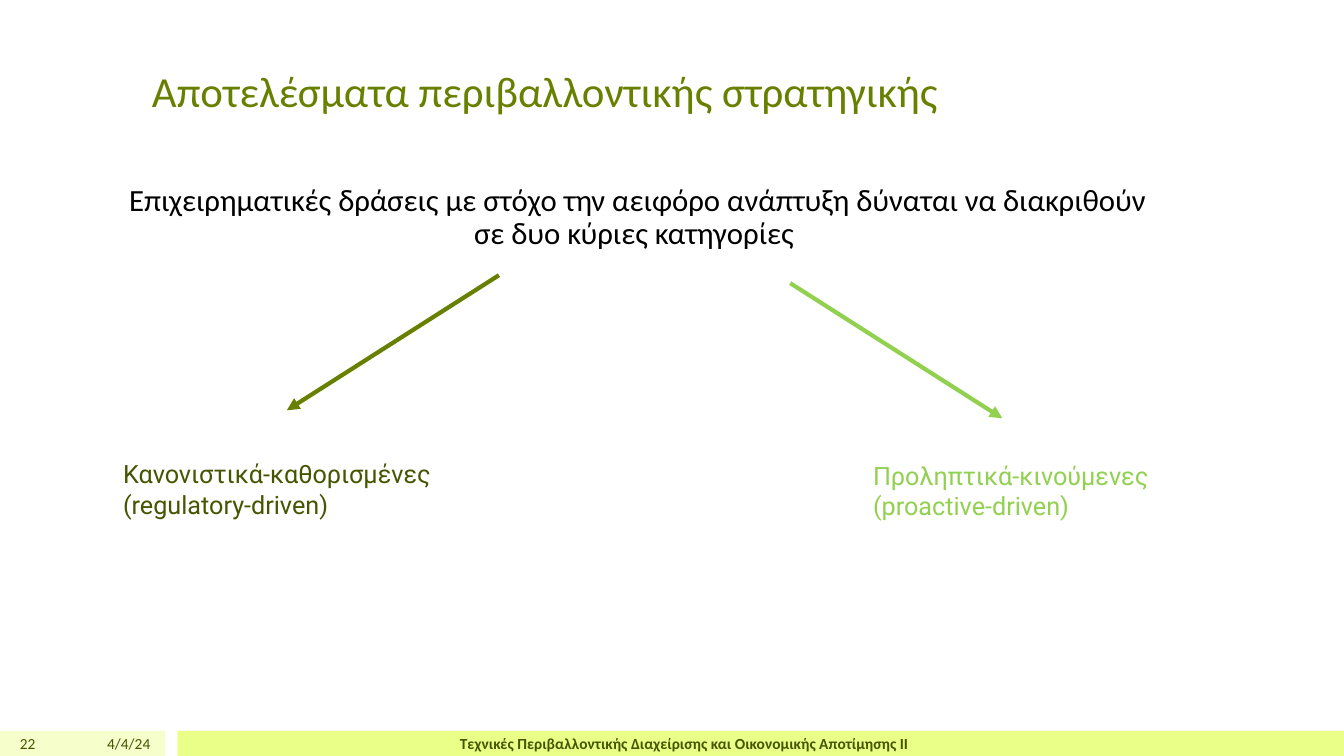
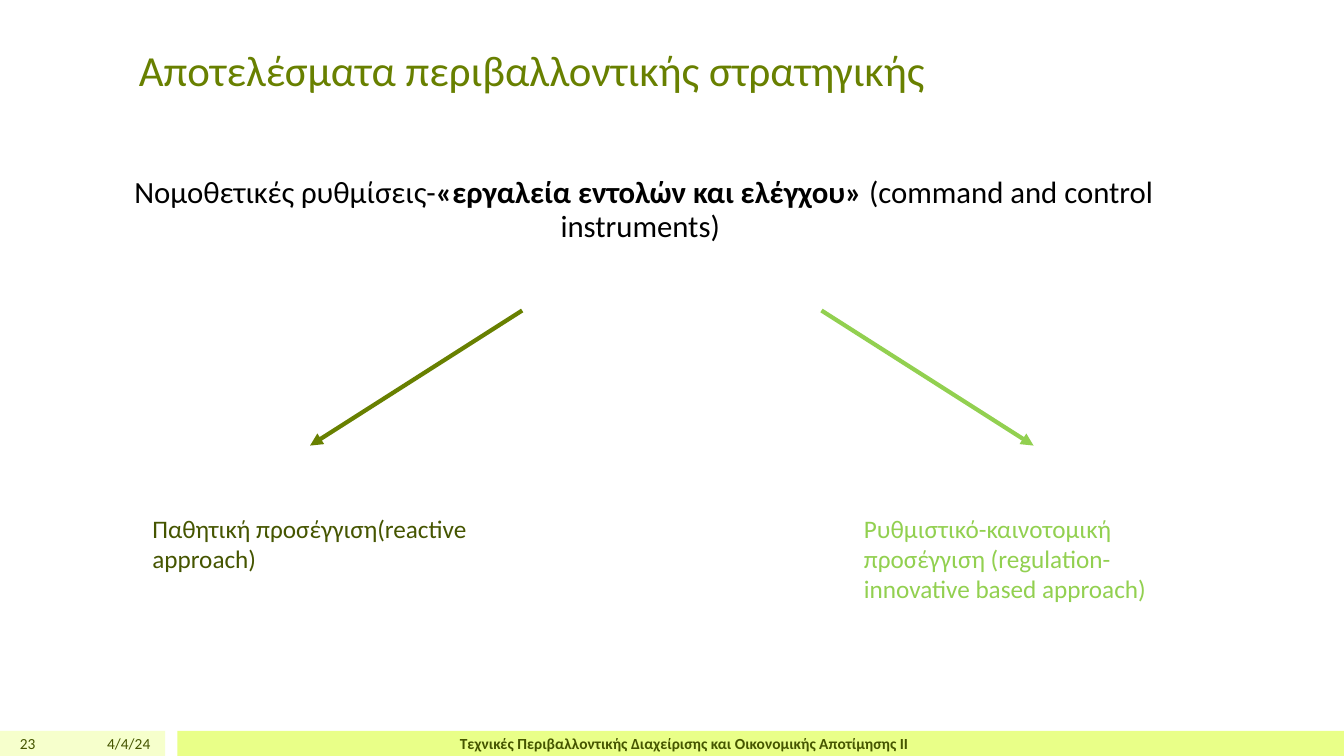
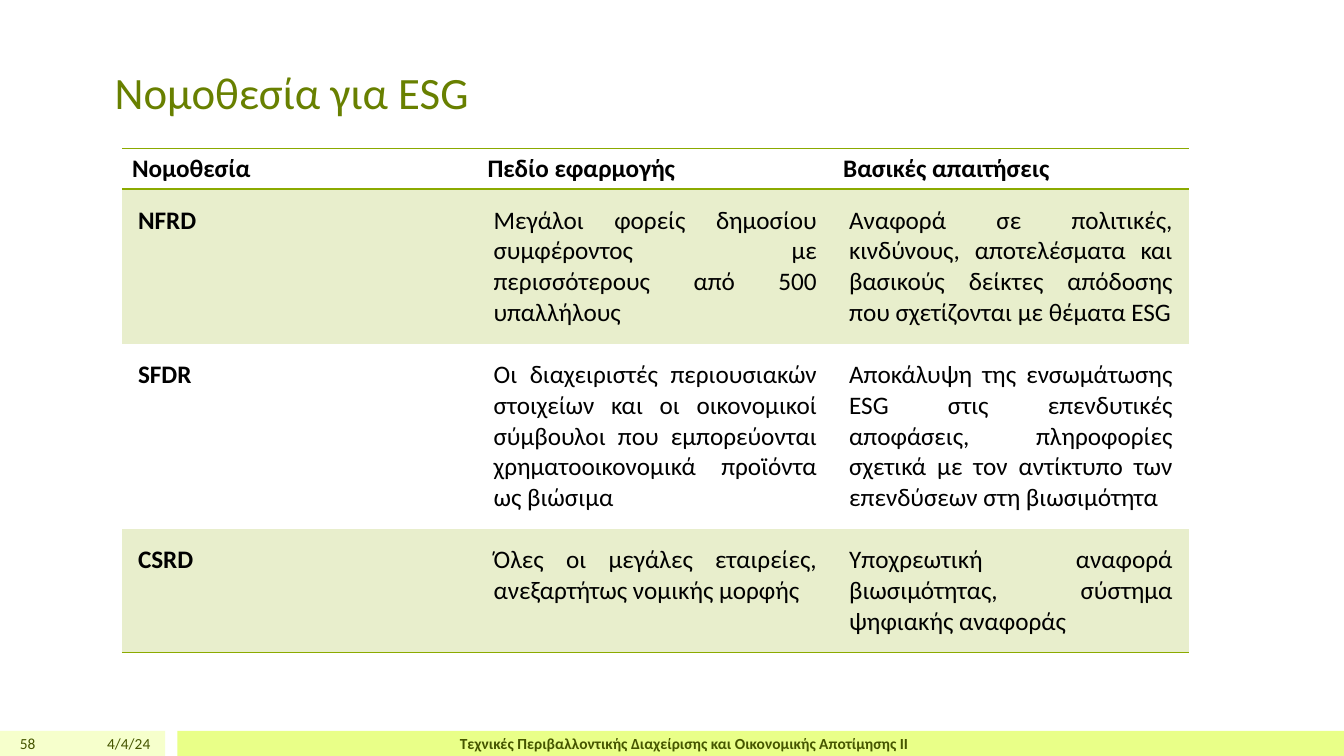
from dataclasses import dataclass

from lxml.etree import SubElement
from pptx import Presentation
from pptx.dml.color import RGBColor
from pptx.enum.shapes import MSO_CONNECTOR as Connector, MSO_SHAPE as Preset
from pptx.enum.text import MSO_ANCHOR as Anchor, PP_ALIGN as Align
from pptx.oxml.ns import qn
from pptx.util import Pt


@dataclass(frozen=True)
class Theme:
    """Colours, fonts and type sizes of the presentation."""

    olive: str = "688000"
    dark_olive: str = "455500"
    green: str = "92D050"
    rule: str = "8BAA00"
    row_tint: str = "E8EECC"
    band_pale: str = "F6FFCC"
    band_bright: str = "E9FF88"
    black: str = "000000"
    font: str = "Calibri"
    label_font: str = "Roboto"
    title_size: float = 30.6
    large_title_size: float = 32
    statement_size: float = 22
    text_size: float = 18
    footer_size: float = 11
    arrow_width: float = 3
    rule_width: float = 1


THEME = Theme()
COURSE = "Τεχνικές Περιβαλλοντικής Διαχείρισης και Οικονομικής Αποτίμησης ΙΙ"
DATE = "4/4/24"
STRATEGY_TITLE = "Αποτελέσματα περιβαλλοντικής στρατηγικής"
FOOTER_TOP, FOOTER_HEIGHT = 522, 18
ARROW_REACH, ARROW_DROP = 151.5, 96.5
NO_TABLE_STYLE = "{2D5ABB26-0587-4C30-8999-92F81FD0307C}"
LEGISLATION = [
    ("Νομοθεσία", "Πεδίο εφαρμογής", "Βασικές απαιτήσεις"),
    (
        "NFRD",
        "Μεγάλοι φορείς δημοσίου συμφέροντος με περισσότερους από 500 υπαλλήλους",
        "Αναφορά σε πολιτικές, κινδύνους, αποτελέσματα και βασικούς δείκτες "
        "απόδοσης που σχετίζονται με θέματα ESG",
    ),
    (
        "SFDR",
        "Οι διαχειριστές περιουσιακών στοιχείων και οι οικονομικοί σύμβουλοι "
        "που εμπορεύονται χρηματοοικονομικά προϊόντα ως βιώσιμα",
        "Αποκάλυψη της ενσωμάτωσης ESG στις επενδυτικές αποφάσεις, πληροφορίες "
        "σχετικά με τον αντίκτυπο των επενδύσεων στη βιωσιμότητα",
    ),
    (
        "CSRD",
        "Όλες οι μεγάλες εταιρείες, ανεξαρτήτως νομικής μορφής",
        "Υποχρεωτική αναφορά βιωσιμότητας, σύστημα ψηφιακής αναφοράς",
    ),
]


def points(*lengths):
    """Convert numbers to lengths in points."""
    return [Pt(length) for length in lengths]


def add_run(paragraph, text, size, color, bold=False, font=THEME.font):
    """Append one formatted run to a paragraph."""
    run = paragraph.add_run()
    run.text = text
    run.font.name = font
    run.font.size = Pt(size)
    run.font.bold = bold
    run.font.color.rgb = RGBColor.from_string(color)


def add_text_frame(slide, box, align=Align.LEFT, anchor=Anchor.TOP):
    """Add a wrapping text box and return its frame."""
    frame = slide.shapes.add_textbox(*points(*box)).text_frame
    frame.word_wrap = True
    frame.vertical_anchor = anchor
    frame.paragraphs[0].alignment = align
    return frame


def add_title(slide, text, box, size=THEME.title_size):
    """Add the slide title, resting on the bottom of its box."""
    frame = add_text_frame(slide, box, anchor=Anchor.BOTTOM)
    add_run(frame.paragraphs[0], text, size, THEME.olive)


def add_statement(slide, box, parts):
    """Add the centred statement from pairs of text and boldness."""
    paragraph = add_text_frame(slide, box, Align.CENTER).paragraphs[0]
    paragraph.line_spacing = 0.9
    for text, bold in parts:
        add_run(paragraph, text, THEME.statement_size, THEME.black, bold)


def add_label(slide, text, box, color, font=THEME.font):
    """Add the name of one branch."""
    frame = add_text_frame(slide, box)
    frame.margin_left = Pt(13)
    add_run(frame.paragraphs[0], text, THEME.text_size, color, font=font)


def add_arrow(slide, start, direction, color):
    """Add an arrow falling to the left (-1) or to the right (1)."""
    left, top = start
    end = left + direction * ARROW_REACH, top + ARROW_DROP
    arrow = slide.shapes.add_connector(Connector.STRAIGHT, *points(*start, *end))
    arrow.line.width = Pt(THEME.arrow_width)
    arrow.line.color.rgb = RGBColor.from_string(color)
    SubElement(arrow.line._get_or_add_ln(), qn("a:tailEnd"), type="triangle")
    SubElement(arrow._element.spPr, qn("a:effectLst"))


def add_band(slide, left, width, color):
    """Add one colour band at the foot of the slide."""
    box = points(left, FOOTER_TOP, width, FOOTER_HEIGHT)
    band = slide.shapes.add_shape(Preset.RECTANGLE, *box)
    band.shadow.inherit = False
    band.fill.solid()
    band.fill.fore_color.rgb = RGBColor.from_string(color)
    band.line.fill.background()


def add_footer(slide, number):
    """Add the bands, slide number, date and course name."""
    add_band(slide, 0, 118, THEME.band_pale)
    add_band(slide, 126.7, 833.3, THEME.band_bright)
    for text, left, width, align, bold in (
        (str(number), 0, 32.4, Align.RIGHT, False),
        (DATE, 36, 78.5, Align.RIGHT, False),
        (COURSE, 128.9, 720, Align.CENTER, True),
    ):
        box = left, FOOTER_TOP, width, FOOTER_HEIGHT
        frame = add_text_frame(slide, box, align, Anchor.MIDDLE)
        add_run(frame.paragraphs[0], text, THEME.footer_size, THEME.dark_olive, bold)


def add_rule(cell, edge):
    """Draw one border of a cell, on edge lnT or lnB."""
    properties = cell._tc.get_or_add_tcPr()
    border = SubElement(properties, qn(f"a:{edge}"), w=str(Pt(THEME.rule_width)))
    fill = SubElement(border, qn("a:solidFill"))
    SubElement(fill, qn("a:srgbClr"), val=THEME.rule)


def fill_cell(cell, text, bold, edges, tinted, margin):
    """Write and format one table cell."""
    for edge in edges:
        add_rule(cell, edge)
    if tinted:
        cell.fill.solid()
        cell.fill.fore_color.rgb = RGBColor.from_string(THEME.row_tint)
    else:
        cell.fill.background()
    if margin:
        cell.margin_left = cell.margin_right = Pt(margin)
        cell.margin_top = cell.margin_bottom = Pt(margin)
    paragraph = cell.text_frame.paragraphs[0]
    paragraph.alignment = Align.JUSTIFY
    add_run(paragraph, text, THEME.text_size, THEME.black, bold)


def add_legislation_table(slide, rows, box, row_heights):
    """Add the table with a ruled header and tinted odd rows."""
    size = len(rows), len(rows[0])
    table = slide.shapes.add_table(*size, *points(*box)).table
    table._tbl.tblPr.find(qn("a:tableStyleId")).text = NO_TABLE_STYLE
    table.horz_banding = False
    last = len(rows) - 1
    for r, (texts, height) in enumerate(zip(rows, row_heights)):
        table.rows[r].height = Pt(height)
        edges = {0: ("lnT", "lnB"), last: ("lnB",)}.get(r, ())
        for c, text in enumerate(texts):
            bold = r == 0 or c == 0
            margin = 11.5 if r else None
            fill_cell(table.cell(r, c), text, bold, edges, r % 2 == 1, margin)


def add_slide(deck, number):
    """Add a blank slide with the shared footer."""
    slide = deck.slides.add_slide(deck.slide_layouts[6])
    add_footer(slide, number)
    return slide


def build_categories(deck):
    """Build the slide on the two categories of action."""
    slide = add_slide(deck, 22)
    add_title(slide, STRATEGY_TITLE, (101.5, 43.2, 734.4, 43.2))
    statement = (
        "Επιχειρηματικές δράσεις με στόχο την αειφόρο ανάπτυξη δύναται να "
        "διακριθούν σε δυο κύριες κατηγορίες "
    )
    add_statement(slide, (74.9, 128.2, 761, 363.6), [(statement, False)])
    add_arrow(slide, (356.4, 196.6), -1, THEME.olive)
    add_arrow(slide, (564.5, 202.3), 1, THEME.green)
    regulatory = "Κανονιστικά-καθορισμένες (regulatory-driven)"
    proactive = "Προληπτικά-κινούμενες (proactive-driven)"
    for text, box, color in (
        (regulatory, (74.9, 324, 245.5, 51), THEME.dark_olive),
        (proactive, (610.6, 325.4, 225.4, 51), THEME.green),
    ):
        add_label(slide, text, box, color, THEME.label_font)


def build_approaches(deck):
    """Build the slide on the two approaches to regulation."""
    slide = add_slide(deck, 23)
    add_title(slide, STRATEGY_TITLE, (92.2, 28.1, 734.4, 43.2))
    statement = [
        ("Νομοθετικές ρυθμίσεις-", False),
        ("«εργαλεία εντολών και ελέγχου»", True),
        (" (command and control instruments) ", False),
    ]
    add_statement(slide, (70.6, 123.1, 778.3, 363.6), statement)
    add_arrow(slide, (373, 221.8), -1, THEME.olive)
    add_arrow(slide, (586.8, 221.8), 1, THEME.green)
    reactive = "Παθητική προσέγγιση(reactive approach)"
    innovative = (
        "Ρυθμιστικό-καινοτομική προσέγγιση "
        "(regulation-innovative based approach)"
    )
    add_label(slide, reactive, (95.8, 362.9, 262.8, 51), THEME.dark_olive)
    add_label(slide, innovative, (604.1, 362.9, 260.6, 72.7), THEME.green)


def build_legislation(deck):
    """Build the slide with the table of ESG legislation."""
    slide = add_slide(deck, 58)
    title_box = 74.9, 26.6, 794.9, 61.9
    add_title(slide, "Νομοθεσία για ESG", title_box, THEME.large_title_size)
    row_heights = 29.2, 110.4, 132.4, 88.4
    table_box = 87.1, 105.8, 762, sum(row_heights)
    add_legislation_table(slide, LEGISLATION, table_box, row_heights)


def main():
    """Build and save the presentation."""
    deck = Presentation()
    deck.slide_width, deck.slide_height = points(960, 540)
    build_categories(deck)
    build_approaches(deck)
    build_legislation(deck)
    deck.save("out.pptx")


if __name__ == "__main__":
    main()
